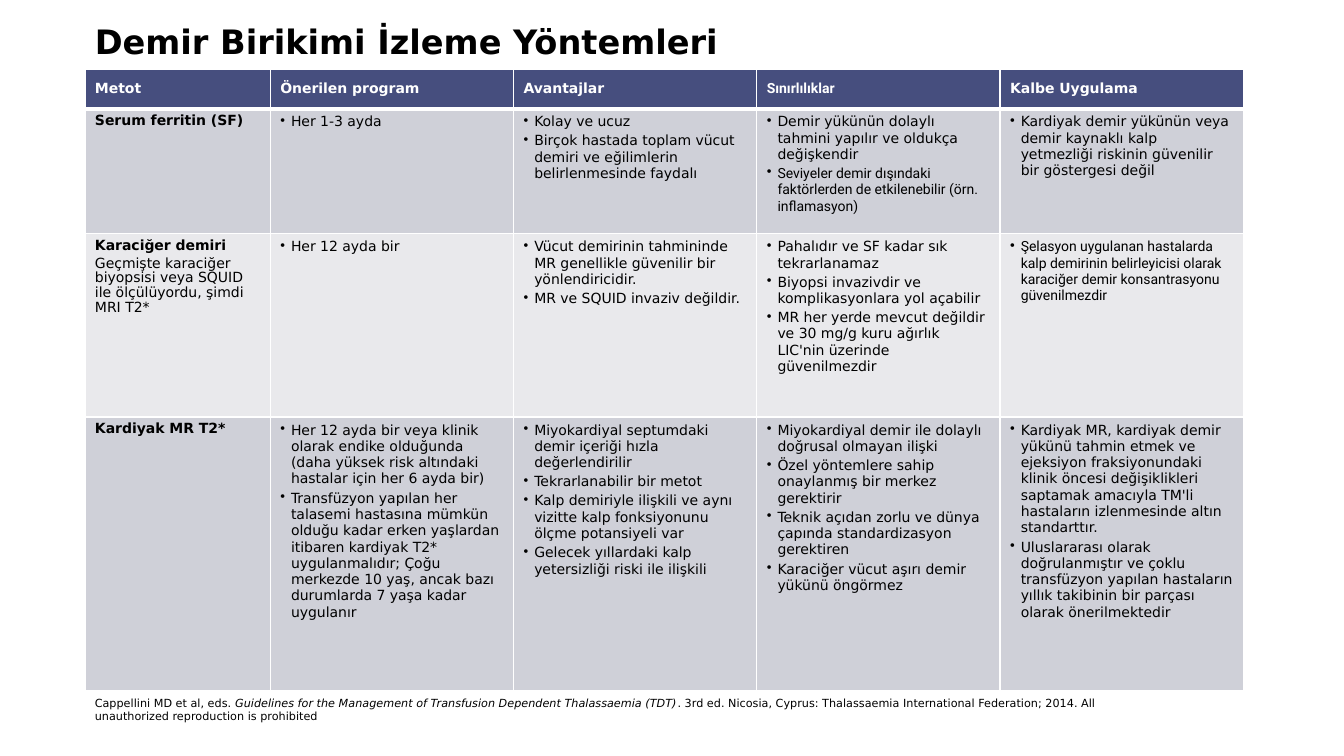
from pptx import Presentation
from pptx.dml.color import RGBColor
from pptx.enum.text import MSO_ANCHOR as Anchor
from pptx.oxml import parse_xml
from pptx.oxml.ns import nsdecls
from pptx.util import Cm, Pt

SANS, ROBOTO = "DejaVu Sans", "Roboto"
BLACK, WHITE, NAVY = "000000", "FFFFFF", "464E7E"
ROW_FILLS = [NAVY, "CFD0D8", "E9E9EC", "CFD0D8"]
COLUMN_WIDTHS = [4.67] + [6.13] * 4
ROW_HEIGHTS = [0.99, 3.15, 4.62, 6.88]
LIMITS = "Sınırlılıklar"
OTHER_FACTORS = "Seviyeler demir dışındaki faktörlerden de etkilenebilir (örn. inflamasyon)"
CHELATION = (
    "Şelasyon uygulanan hastalarda kalp demirinin belirleyicisi olarak "
    "karaciğer demir konsantrasyonu güvenilmezdir"
)
ROBOTO_TEXTS = {LIMITS, OTHER_FACTORS, CHELATION}

HEADERS = ["Metot", "Önerilen program", "Avantajlar", LIMITS, "Kalbe Uygulama"]
METHODS = [
    [
        ["Serum ferritin (SF)"],
        ["Her 1-3 ayda"],
        [
            "Kolay ve ucuz",
            "Birçok hastada toplam vücut demiri ve eğilimlerin belirlenmesinde faydalı",
        ],
        ["Demir yükünün dolaylı tahmini yapılır ve oldukça değişkendir", OTHER_FACTORS],
        [
            "Kardiyak demir yükünün veya demir kaynaklı kalp yetmezliği riskinin "
            "güvenilir bir göstergesi değil"
        ],
    ],
    [
        [
            "Karaciğer demiri",
            "Geçmişte karaciğer biyopsisi veya SQUID ile ölçülüyordu, şimdi MRI T2*",
        ],
        ["Her 12 ayda bir"],
        [
            "Vücut demirinin tahmininde MR genellikle güvenilir bir yönlendiricidir.",
            "MR ve SQUID invaziv değildir.",
        ],
        [
            "Pahalıdır ve SF kadar sık tekrarlanamaz",
            "Biyopsi invazivdir ve komplikasyonlara yol açabilir",
            "MR her yerde mevcut değildir ve 30 mg/g kuru ağırlık LIC'nin üzerinde "
            "güvenilmezdir",
        ],
        [CHELATION],
    ],
    [
        ["Kardiyak MR T2*"],
        [
            "Her 12 ayda bir veya klinik olarak endike olduğunda (daha yüksek risk "
            "altındaki hastalar için her 6 ayda bir)",
            "Transfüzyon yapılan her talasemi hastasına mümkün olduğu kadar erken "
            "yaşlardan itibaren kardiyak T2* uygulanmalıdır; Çoğu merkezde 10 yaş, "
            "ancak bazı durumlarda 7 yaşa kadar uygulanır",
        ],
        [
            "Miyokardiyal septumdaki demir içeriği hızla değerlendirilir",
            "Tekrarlanabilir bir metot",
            "Kalp demiriyle ilişkili ve aynı vizitte kalp fonksiyonunu ölçme "
            "potansiyeli var",
            "Gelecek yıllardaki kalp yetersizliği riski ile ilişkili",
        ],
        [
            "Miyokardiyal demir ile dolaylı doğrusal olmayan ilişki",
            "Özel yöntemlere sahip onaylanmış bir merkez gerektirir",
            "Teknik açıdan zorlu ve dünya çapında standardizasyon gerektiren",
            "Karaciğer vücut aşırı demir yükünü öngörmez",
        ],
        [
            "Kardiyak MR, kardiyak demir yükünü tahmin etmek ve ejeksiyon "
            "fraksiyonundaki klinik öncesi değişiklikleri saptamak amacıyla TM'li "
            "hastaların izlenmesinde altın standarttır.",
            "Uluslararası olarak doğrulanmıştır ve çoklu transfüzyon yapılan "
            "hastaların yıllık takibinin bir parçası olarak önerilmektedir",
        ],
    ],
]
CITATION = [
    ("Cappellini MD et al, eds. ", False),
    ("Guidelines for the Management of Transfusion Dependent Thalassaemia (TDT)", True),
    (
        ". 3rd ed. Nicosia, Cyprus: Thalassaemia International Federation; 2014. "
        "All unauthorized reproduction is prohibited",
        False,
    ),
]


def rgb(color):
    """Turn a hex string into a colour."""
    return RGBColor.from_string(color)


def style_font(font, size, color=BLACK, bold=False, name=SANS):
    """Set the face, size, weight and colour of a font."""
    font.name, font.size, font.bold = name, Pt(size), bold
    font.color.rgb = rgb(color)


def add_text(slide, left, top, width, height, runs, size, bold=False):
    """Add a one-paragraph text box from (text, italic) runs."""
    box = slide.shapes.add_textbox(Cm(left), Cm(top), Cm(width), Cm(height))
    box.text_frame.word_wrap = True
    paragraph = box.text_frame.paragraphs[0]
    style_font(paragraph.font, size, bold=bold)
    for text, italic in runs:
        run = paragraph.add_run()
        run.text = text
        if italic:
            run.font.italic = True


def add_bullet(paragraph):
    """Give a paragraph a black bullet with a hanging indent."""
    properties = paragraph._p.get_or_add_pPr()
    properties.set("marL", str(Cm(0.27)))
    properties.set("indent", str(Cm(-0.27)))
    color = f'<a:buClr {nsdecls("a")}><a:srgbClr val="{BLACK}"/></a:buClr>'
    properties.append(parse_xml(color))
    properties.append(parse_xml(f'<a:buChar {nsdecls("a")} char="•"/>'))


def add_borders(cell, top, bottom):
    """Draw white borders around a cell, with the given top and bottom widths."""
    properties = cell._tc.get_or_add_tcPr()
    for side, width in {"L": 1, "R": 1, "T": top, "B": bottom}.items():
        properties.append(parse_xml(
            f'<a:ln{side} {nsdecls("a")} w="{Pt(width)}"><a:solidFill>'
            f'<a:srgbClr val="{WHITE}"/></a:solidFill></a:ln{side}>'
        ))


def fill_cell(cell, texts, row, column):
    """Write and style the paragraphs of one table cell."""
    header = row == 0
    add_borders(cell, top=3 if row == 1 else 1, bottom=3 if header else 1)
    cell.fill.solid()
    cell.fill.fore_color.rgb = rgb(ROW_FILLS[row])
    cell.vertical_anchor = Anchor.MIDDLE if header else Anchor.TOP
    cell.text = "\n".join(texts)
    for index, paragraph in enumerate(cell.text_frame.paragraphs):
        paragraph.space_before = Pt(6 if header else 2)
        if header or column == 0:
            paragraph.line_spacing = 0.9
        else:
            add_bullet(paragraph)
        style_font(
            paragraph.font,
            10,
            WHITE if header else BLACK,
            header or (column == 0 and index == 0),
            ROBOTO if paragraph.text in ROBOTO_TEXTS else SANS,
        )


def add_methods_table(slide):
    """Add the comparison table of monitoring methods."""
    rows = [[[header] for header in HEADERS]] + METHODS
    table = slide.shapes.add_table(
        len(rows), len(HEADERS), Cm(2.14), Cm(1.75),
        Cm(sum(COLUMN_WIDTHS)), Cm(sum(ROW_HEIGHTS)),
    ).table
    for column, width in zip(table.columns, COLUMN_WIDTHS):
        column.width = Cm(width)
    for row, height in zip(table.rows, ROW_HEIGHTS):
        row.height = Cm(height)
    for row, cells in enumerate(rows):
        for column, texts in enumerate(cells):
            fill_cell(table.cell(row, column), texts, row, column)


def main():
    """Build the slide and save it."""
    presentation = Presentation()
    presentation.slide_width, presentation.slide_height = Cm(33.87), Cm(19.05)
    slide = presentation.slides.add_slide(presentation.slide_layouts[6])
    title = [("Demir Birikimi İzleme Yöntemleri", False)]
    add_text(slide, 2.14, 0.41, 29.62, 1.27, title, 24, bold=True)
    add_methods_table(slide)
    add_text(slide, 2.14, 17.42, 27.05, 0.94, CITATION, 8)
    presentation.save("out.pptx")


if __name__ == "__main__":
    main()
